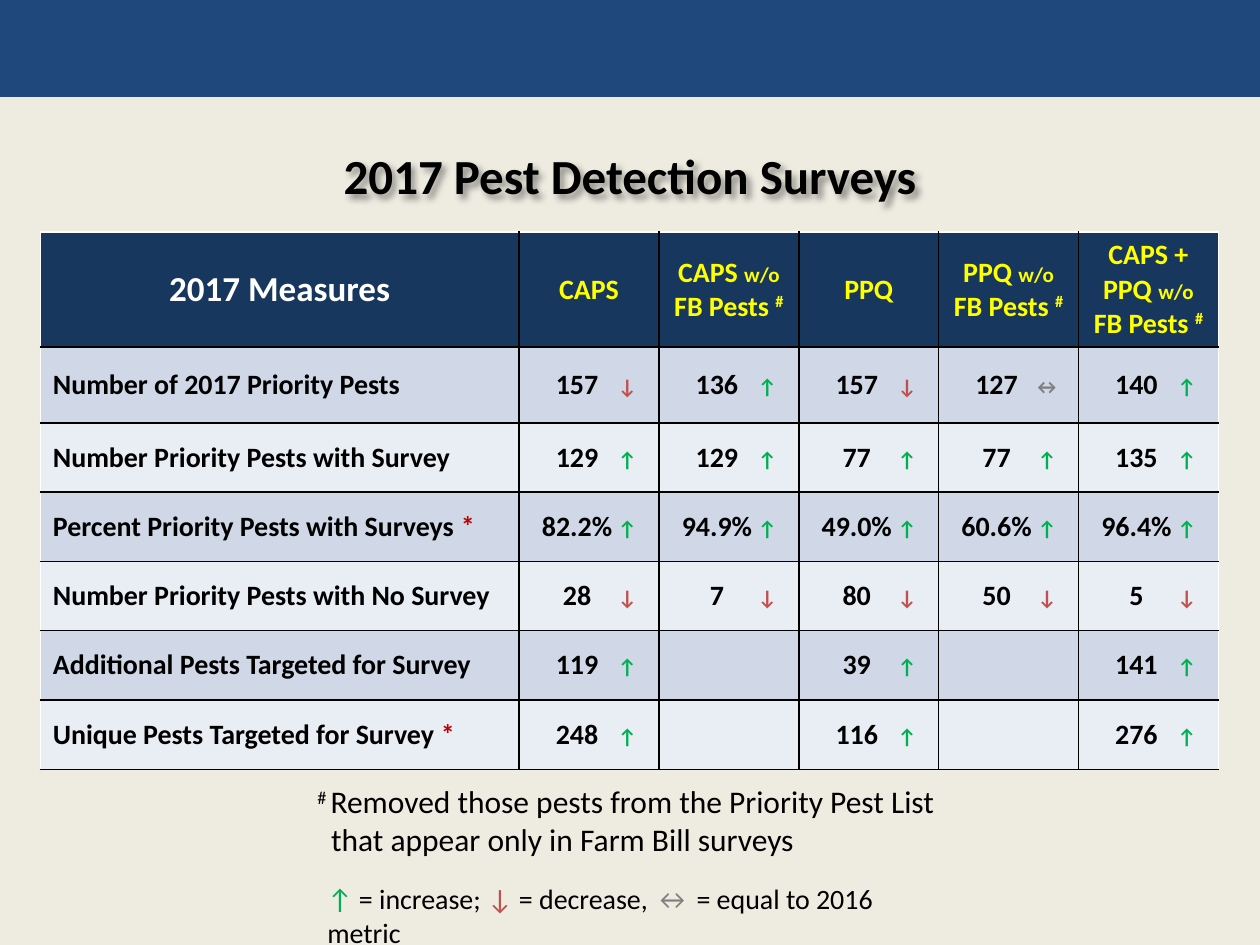
"""Build the 2017 pest detection survey slide with its table of measures."""
import lxml.etree
import pptx
import pptx.dml.color
import pptx.enum.shapes
import pptx.enum.text
import pptx.oxml
import pptx.oxml.ns
import pptx.util

THEME = {
    "font": "Calibri",
    "page": "EEECE1", "band": "1F497D", "header": "17375E",
    "stripes": ("D0D8E8", "E9EDF4"), "rule": "000000", "edge": "FFFFFF",
    "styles": {
        "title": {"size": 28, "color": "000000", "bold": True},
        "corner": {"size": 20, "color": "FFFFFF", "bold": True},
        "head": {"size": 16, "color": "FFFF00", "bold": True},
        "head small": {"size": 12, "color": "FFFF00", "bold": True},
        "head mark": {"size": 16, "color": "FFFF00", "bold": True, "baseline": 30},
        "cell": {"size": 16, "color": "000000", "bold": True},
        "star": {"size": 16, "color": "C00000", "bold": True},
        "note": {"size": 18, "color": "000000"},
        "note mark": {"size": 18, "color": "000000", "baseline": 30},
        "legend": {"size": 16, "color": "000000"},
    },
    "arrows": {"↑": "00B050", "↓": "C0504D", "↔": "808080"},
}
for arrow, color in THEME["arrows"].items():
    THEME["styles"]["cell " + arrow] = {"size": 12, "color": color, "bold": True}
    THEME["styles"]["legend " + arrow] = {"size": 16, "color": color}

WITHOUT = [("w/o", "head small"), (" FB Pests ", "head"), ("#", "head mark")]
HEADERS = [
    [("2017 Measures", "corner")],
    [("CAPS", "head")],
    [("CAPS ", "head")] + WITHOUT,
    [("PPQ", "head")],
    [("PPQ ", "head")] + WITHOUT,
    [("CAPS + PPQ ", "head")] + WITHOUT,
]
MEASURES = [
    ("Number of 2017 Priority Pests", "157↓", "136↑", "157↓", "127↔", "140↑"),
    ("Number Priority Pests with Survey", "129↑", "129↑", "77↑", "77↑", "135↑"),
    ("Percent Priority Pests with Surveys *", "82.2%↑", "94.9%↑", "49.0%↑", "60.6%↑", "96.4%↑"),
    ("Number Priority Pests with No Survey", "28↓", "7↓", "80↓", "50↓", "5↓"),
    ("Additional Pests Targeted for Survey", "119↑", "", "39↑", "", "141↑"),
    ("Unique Pests Targeted for Survey *", "248↑", "", "116↑", "", "276↑"),
]
COLUMNS = [3.8] + [1.11] * 5
ROWS = [0.9, 0.6] + [0.55] * 5
TABS = (0.46, 0.86)


def write(para, spans):
    """Add styled runs to a paragraph."""
    for text, name in spans:
        style = THEME["styles"][name]
        span = para.add_run()
        span.text = text
        values = {"name": THEME["font"], "size": pptx.util.Pt(style["size"]),
                  "bold": style.get("bold", False)}
        for key, value in values.items():
            setattr(span.font, key, value)
        span.font.color.rgb = pptx.dml.color.RGBColor.from_string(style["color"])
        if "baseline" in style:
            span._r.get_or_add_rPr().set("baseline", str(style["baseline"] * 1000))


def add(parent, tag, **attributes):
    """Append a drawing element and return it."""
    element = lxml.etree.SubElement(parent, pptx.oxml.ns.qn("a:" + tag))
    for key, value in attributes.items():
        element.set(key, str(value))
    return element


deck = pptx.Presentation()
deck.slide_width, deck.slide_height = pptx.util.Inches(10), pptx.util.Inches(7.5)
wide, high = deck.slide_width, deck.slide_height
page = deck.slides.add_slide(deck.slide_layouts[5])
page.background.fill.solid()
page.background.fill.fore_color.rgb = pptx.dml.color.RGBColor.from_string(THEME["page"])

band = page.shapes.add_shape(
    pptx.enum.shapes.MSO_SHAPE.RECTANGLE, 0, 0, wide, pptx.util.Inches(0.77))
band.shadow.inherit = False
band.fill.solid()
band.fill.fore_color.rgb = pptx.dml.color.RGBColor.from_string(THEME["band"])
band.line.fill.background()

title = page.shapes.title
frame = {"left": 0.05 * wide, "top": pptx.util.Inches(1),
         "width": 0.9 * wide, "height": pptx.util.Inches(0.78)}
for key, value in frame.items():
    setattr(title, key, int(value))
title.text_frame.vertical_anchor = pptx.enum.text.MSO_ANCHOR.MIDDLE
title.text_frame.paragraphs[0].alignment = pptx.enum.text.PP_ALIGN.CENTER
write(title.text_frame.paragraphs[0], [("2017 Pest Detection Surveys", "title")])
effects = add(title._element.spPr, "effectLst")
shadow = add(effects, "outerShdw", blurRad=50800, dist=38100, dir=2700000, algn="tl", rotWithShape=0)
add(add(shadow, "srgbClr", val="000000"), "alpha", val=40000)

table = page.shapes.add_table(
    len(ROWS), len(COLUMNS), pptx.util.Inches(0.32), pptx.util.Inches(1.84),
    pptx.util.Inches(sum(COLUMNS)), pptx.util.Inches(sum(ROWS))).table
for column, width in zip(table.columns, COLUMNS):
    column.width = pptx.util.Inches(width)
for row, height in zip(table.rows, ROWS):
    row.height = pptx.util.Inches(height)

for r in range(len(ROWS)):
    for c in range(len(COLUMNS)):
        cell = table.cell(r, c)
        cell.vertical_anchor = pptx.enum.text.MSO_ANCHOR.MIDDLE
        outer = {"lnL": c == 0, "lnR": c == len(COLUMNS) - 1, "lnT": r == 0, "lnB": False}
        for tag, is_edge in outer.items():
            line = add(cell._tc.get_or_add_tcPr(), tag, w=12700)
            add(add(line, "solidFill"), "srgbClr", val=THEME["edge" if is_edge else "rule"])
        cell.fill.solid()
        fill = THEME["stripes"][(r - 1) % 2] if r else THEME["header"]
        cell.fill.fore_color.rgb = pptx.dml.color.RGBColor.from_string(fill)
        para = cell.text_frame.paragraphs[0]
        if r == 0:
            para.alignment = pptx.enum.text.PP_ALIGN.CENTER
            write(para, HEADERS[c])
            continue
        text = MEASURES[r - 1][c]
        if c == 0:
            label, star, _ = text.partition("*")
            write(para, [(label, "cell")] + ([(star, "star")] if star else []))
        elif text:
            for side in ("left", "right", "top", "bottom"):
                setattr(cell, "margin_" + side, 0)
            stops = add(para._p.get_or_add_pPr(), "tabLst")
            for stop in TABS:
                add(stops, "tab", pos=pptx.util.Inches(stop), algn="ctr")
            write(para, [("\t" + text[:-1] + "\t", "cell"), (text[-1], "cell " + text[-1])])

NOTES = [
    ((2.42, 6.16, 5.17, 0.71), False, [
        [("# ", "note mark"), ("Removed those pests from the Priority Pest List", "note")],
        [("that appear only in Farm Bill surveys", "note")]]),
    ((2.5, 6.95, 5, 0.37), True, [
        [("↑", "legend ↑"), (" = increase; ", "legend"), ("↓", "legend ↓"),
         (" = decrease, ", "legend"), ("↔", "legend ↔"), (" = equal to 2016 metric", "legend")]]),
]
for place, wraps, lines in NOTES:
    box = page.shapes.add_textbox(*map(pptx.util.Inches, place))
    box.text_frame.word_wrap = wraps
    box.text_frame.auto_size = pptx.enum.text.MSO_AUTO_SIZE.SHAPE_TO_FIT_TEXT
    for number, spans in enumerate(lines):
        para = box.text_frame.add_paragraph() if number else box.text_frame.paragraphs[0]
        if number:
            para._p.get_or_add_pPr().set("marL", str(pptx.util.Inches(0.11)))
        write(para, spans)

deck.save("out.pptx")
